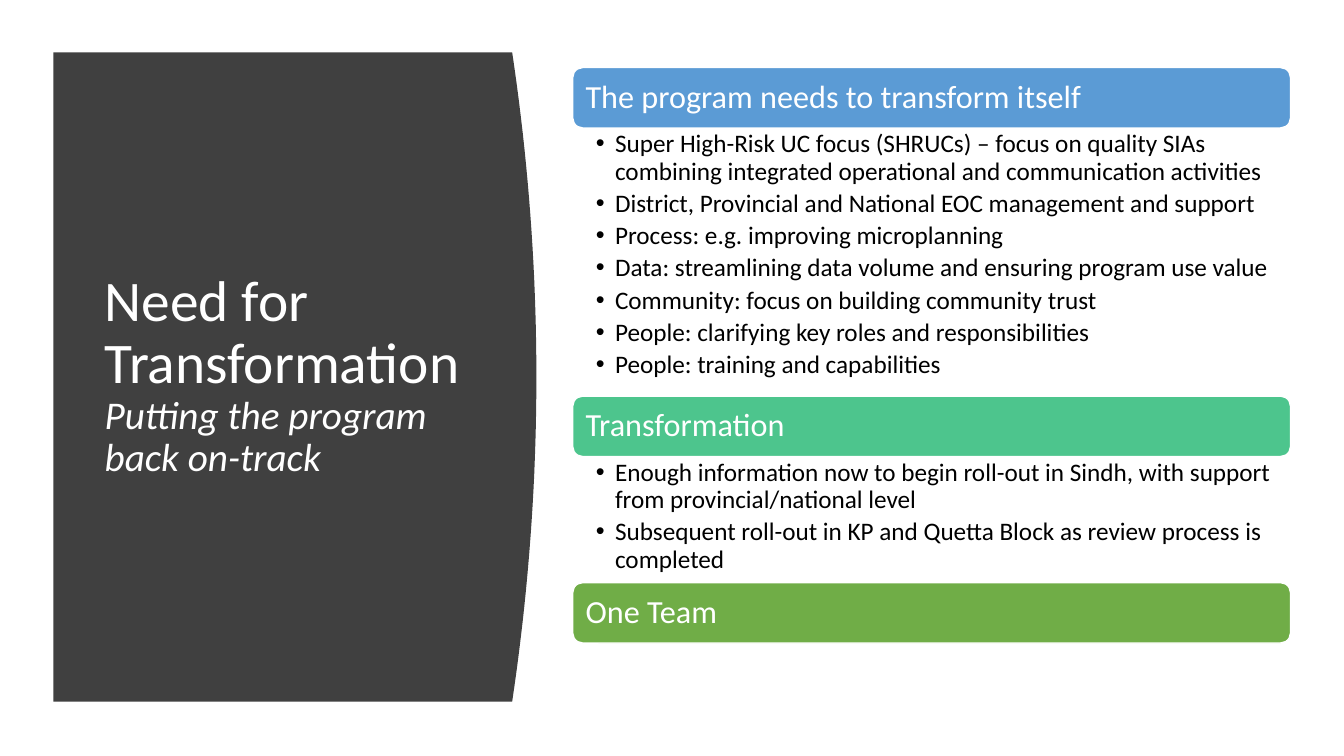
from dataclasses import dataclass

from lxml.etree import SubElement
from pptx import Presentation
from pptx.dml.color import RGBColor
from pptx.enum.shapes import MSO_SHAPE
from pptx.enum.text import MSO_ANCHOR, PP_ALIGN
from pptx.oxml.ns import qn
from pptx.util import Inches, Pt


@dataclass(frozen=True)
class Theme:
    """Colours, font and type sizes of the slide."""
    font: str = "Calibri"
    white: RGBColor = RGBColor(0xFF, 0xFF, 0xFF)
    black: RGBColor = RGBColor(0x00, 0x00, 0x00)
    panel: RGBColor = RGBColor(0x40, 0x40, 0x40)
    blue: RGBColor = RGBColor(0x5B, 0x9B, 0xD5)
    teal: RGBColor = RGBColor(0x4D, 0xC5, 0x8D)
    green: RGBColor = RGBColor(0x70, 0xAD, 0x47)
    title_size: float = 41
    subtitle_size: float = 28
    heading_size: float = 23
    bullet_size: float = 18


THEME = Theme()
BAND_HEIGHT = 0.6
SECTIONS = [
    ("The program needs to transform itself", THEME.blue, 2.66, [
        "Super High-Risk UC focus (SHRUCs) – focus on quality SIAs combining "
        "integrated operational and communication activities",
        "District, Provincial and National EOC management and support",
        "Process: e.g. improving microplanning",
        "Data: streamlining data volume and ensuring program use value",
        "Community: focus on building community trust",
        "People: clarifying key roles and responsibilities",
        "People: training and capabilities",
    ]),
    ("Transformation", THEME.teal, 1.25, [
        "Enough information now to begin roll-out in Sindh, with support "
        "from provincial/national level",
        "Subsequent roll-out in KP and Quetta Block as review process is completed",
    ]),
    ("One Team", THEME.green, 0, []),
]


def apply_format(target, values):
    """Set each named attribute on the target."""
    for name, value in values.items():
        setattr(target, name, value)


def add_run(paragraph, text, size, color, italic=False):
    """Append a styled run to a paragraph."""
    run = paragraph.add_run()
    run.text = text
    apply_format(run.font, {"name": THEME.font, "size": Pt(size), "italic": italic})
    run.font.color.rgb = color


def format_frame(frame, anchor, insets):
    """Set wrapping, anchor and the left, top, right and bottom insets."""
    sides = ("margin_left", "margin_top", "margin_right", "margin_bottom")
    margins = {side: Inches(inset) for side, inset in zip(sides, insets)}
    apply_format(frame, {"word_wrap": True, "vertical_anchor": anchor, **margins})


def add_bullet(paragraph):
    """Give a paragraph a round bullet with a hanging indent."""
    properties = paragraph._p.get_or_add_pPr()
    properties.set("marL", str(Inches(0.19)))
    properties.set("indent", str(Inches(-0.19)))
    SubElement(properties, qn("a:buFont"), typeface="Arial")
    SubElement(properties, qn("a:buChar"), char="•")


def add_title_panel(slide, left, top, width, height):
    """Draw the dark panel with its bowed right edge and the title on it."""
    bulge, steps = 0.24, 40
    edge = []
    for step in range(steps + 1):
        offset = 2 * step / steps - 1
        edge.append((Inches(left + width - bulge * offset ** 2),
                     Inches(top + height * step / steps)))
    builder = slide.shapes.build_freeform(Inches(left), Inches(top))
    builder.add_line_segments(edge + [(Inches(left), Inches(top + height))], close=True)
    panel = builder.convert_to_shape()
    panel.shadow.inherit = False
    panel.fill.solid()
    panel.fill.fore_color.rgb = THEME.panel
    panel.line.fill.background()

    title = slide.shapes.add_textbox(Inches(left + 0.41), Inches(top + 0.59),
                                     Inches(3.74), Inches(height - 1.2))
    format_frame(title.text_frame, MSO_ANCHOR.MIDDLE, (0.1, 0.05, 0.1, 0.05))
    paragraph = title.text_frame.paragraphs[0]
    paragraph.line_spacing = 0.9
    add_run(paragraph, "Need for Transformation", THEME.title_size, THEME.white)
    paragraph.add_line_break()
    add_run(paragraph, "Putting the program back on-track",
            THEME.subtitle_size, THEME.white, italic=True)


def add_band(slide, left, top, width, text, color):
    """Draw a rounded heading band."""
    band = slide.shapes.add_shape(MSO_SHAPE.ROUNDED_RECTANGLE, Inches(left), Inches(top),
                                  Inches(width), Inches(BAND_HEIGHT))
    band.shadow.inherit = False
    band.fill.solid()
    band.fill.fore_color.rgb = color
    band.line.color.rgb = THEME.white
    band.line.width = Pt(1)
    format_frame(band.text_frame, MSO_ANCHOR.MIDDLE, (0.1, 0.05, 0.1, 0.05))
    paragraph = band.text_frame.paragraphs[0]
    apply_format(paragraph, {"alignment": PP_ALIGN.LEFT, "line_spacing": 0.9})
    add_run(paragraph, text, THEME.heading_size, THEME.white)


def add_bullets(slide, left, top, width, height, items):
    """Place the bulleted list that belongs to a heading band."""
    box = slide.shapes.add_textbox(Inches(left), Inches(top), Inches(width), Inches(height))
    frame = box.text_frame
    format_frame(frame, MSO_ANCHOR.TOP, (0.23, 0.03, 0.18, 0.03))
    for index, item in enumerate(items):
        paragraph = frame.add_paragraph() if index else frame.paragraphs[0]
        apply_format(paragraph, {"line_spacing": 0.9, "space_after": Pt(3.6)})
        add_bullet(paragraph)
        add_run(paragraph, item, THEME.bullet_size, THEME.black)


def add_sections(slide, left, top, width):
    """Stack the heading bands and their lists from the top down."""
    for heading, color, list_height, items in SECTIONS:
        add_band(slide, left, top, width, heading, color)
        top += BAND_HEIGHT
        if items:
            add_bullets(slide, left, top, width, list_height, items)
        top += list_height


def main():
    """Build and save the presentation."""
    presentation = Presentation()
    apply_format(presentation, {"slide_width": Inches(13.33), "slide_height": Inches(7.5)})
    slide = presentation.slides.add_slide(presentation.slide_layouts[6])
    add_title_panel(slide, 0.53, 0.52, 4.79, 6.44)
    add_sections(slide, 5.68, 0.67, 7.12)
    presentation.save("out.pptx")


if __name__ == "__main__":
    main()
